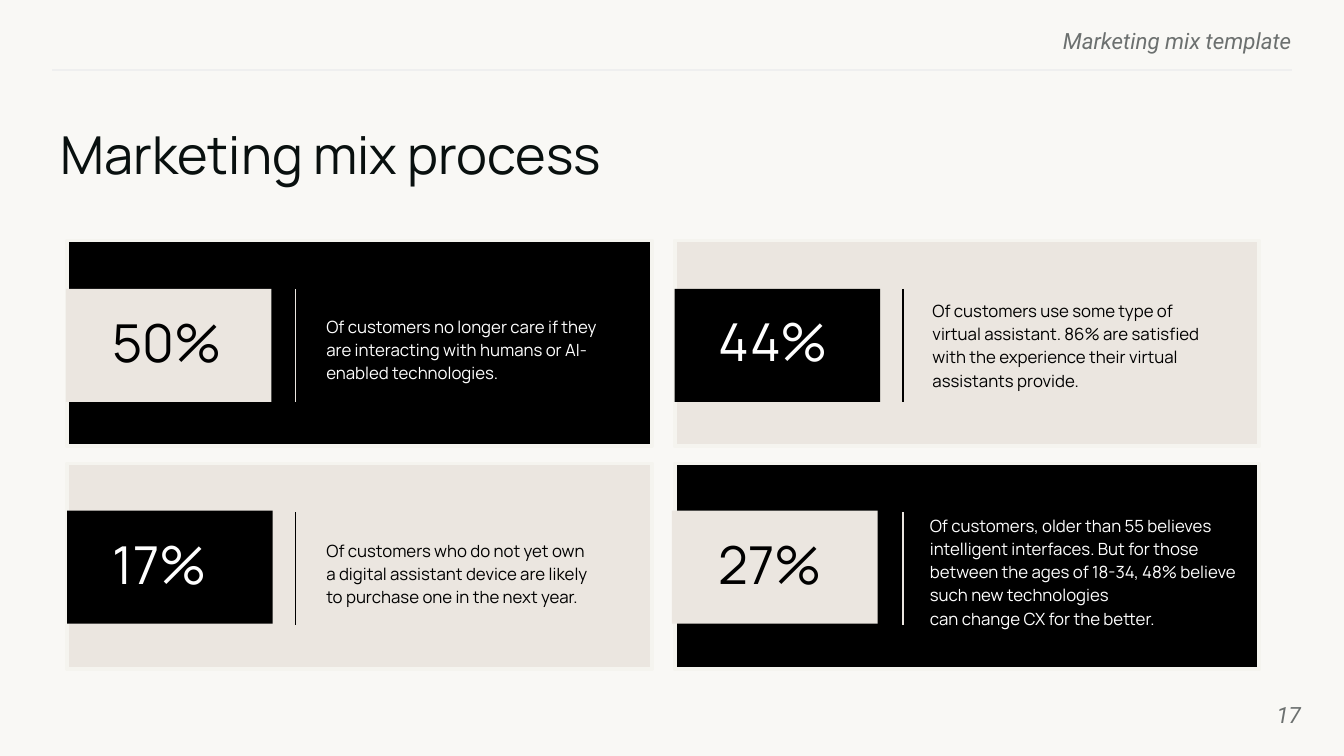
"""Build the marketing mix process slide with four statistic cards."""
import pptx
import pptx.util
from pptx.dml.color import RGBColor
from pptx.enum.shapes import MSO_CONNECTOR, MSO_SHAPE
from pptx.enum.text import MSO_ANCHOR, PP_ALIGN
from pptx.oxml.ns import qn
from lxml import etree

Inches, Pt = pptx.util.Inches, pptx.util.Pt

PAPER = RGBColor(0xF9, 0xF8, 0xF5)
BLACK = RGBColor(0, 0, 0)
WHITE = RGBColor(0xFF, 0xFF, 0xFF)
SAND = RGBColor(0xEB, 0xE6, 0xE0)
EDGE = RGBColor(0xF5, 0xF4, 0xEF)
RULE = RGBColor(0xEF, 0xEF, 0xEF)
GREY = RGBColor(0x6C, 0x70, 0x6F)
INK = RGBColor(0x09, 0x10, 0x0F)

HEAD = "Marketing mix template"
TITLE = "Marketing mix process"
PAGE = "17"
CARDS = [
    {"stat": "50%", "dark": True, "tag": (-0.01, 0.36),
     "num": (0.24, 0.47, 1.19, 0.57), "body": (1.83, 0.5, 2.33, 0.6),
     "text": ["Of customers no longer care if they are interacting with "
              "humans or AI-enabled technologies."]},
    {"stat": "44%", "dark": False, "tag": (0, 0.36),
     "num": (0.23, 0.46, 1.22, 0.57), "body": (1.82, 0.38, 2.26, 0.78),
     "text": ["Of customers use some type of virtual assistant. 86% are "
              "satisfied with the experience their virtual assistants "
              "provide."]},
    {"stat": "17%", "dark": False, "tag": (0, 0.35),
     "num": (0.24, 0.46, 1.01, 0.57), "body": (1.83, 0.42, 2.18, 0.78),
     "text": ["Of customers who do not yet own a digital assistant device "
              "are likely to purchase one in the next year."]},
    {"stat": "27%", "dark": True, "tag": (-0.02, 0.35),
     "num": (0.23, 0.46, 1.1, 0.57), "body": (1.8, 0.32, 2.51, 0.95),
     "text": ["Of customers, older than 55 believes intelligent interfaces. "
              "But for those between the ages of 18-34, 48% believe such "
              "new technologies ", "can change CX for the better."]},
]
LEFT, TOP = 0.5, 1.79
WIDE, HIGH = 4.35, 1.53
STEP_X, STEP_Y = 4.52, 1.66
TAG_W, TAG_H = 1.53, 0.84
BAR_X, BAR_Y = 1.7, 0.36


def write(shape, lines, font, size, color, pad=True, italic=False,
          align=PP_ALIGN.LEFT, anchor=MSO_ANCHOR.TOP):
    frame = shape.text_frame
    frame.word_wrap = True
    frame.vertical_anchor = anchor
    frame.margin_left = frame.margin_right = Inches(0.1 if pad else 0)
    frame.margin_top = frame.margin_bottom = Inches(0.05 if pad else 0)
    para = frame.paragraphs[0]
    para.alignment = align
    for i, line in enumerate(lines):
        if i:
            para.add_line_break()
        run = para.add_run()
        run.text = line
        run.font.name = font
        run.font.size = Pt(size)
        run.font.italic = italic
        run.font.color.rgb = color
    return para


def add_text(slide, box, lines, *style, **more):
    shape = slide.shapes.add_textbox(*map(Inches, box))
    return write(shape, lines, *style, **more)


def add_rect(slide, box, fill, edge=None):
    rect = slide.shapes.add_shape(MSO_SHAPE.RECTANGLE, *map(Inches, box))
    rect.shadow.inherit = False
    rect.fill.solid()
    rect.fill.fore_color.rgb = fill
    if edge is None:
        rect.line.fill.background()
    else:
        rect.line.color.rgb = edge
        rect.line.width = Pt(2)
    return rect


def add_line(slide, ends, color):
    line = slide.shapes.add_connector(
        MSO_CONNECTOR.STRAIGHT, *map(Inches, ends))
    line.line.color.rgb = color
    line.line.width = Pt(0.75)
    etree.SubElement(line._element.spPr, qn("a:effectLst"))


def add_card(slide, x, y, card):
    fill, tint, ink, num_ink = (
        (BLACK, SAND, WHITE, BLACK) if card["dark"]
        else (SAND, BLACK, BLACK, WHITE))

    def place(dx, dy, w, h):
        return x + dx, y + dy, w, h

    add_rect(slide, (x, y, WIDE, HIGH), fill, EDGE)
    bar = x + BAR_X, y + BAR_Y
    add_line(slide, (*bar, bar[0], bar[1] + TAG_H), tint)
    para = add_text(slide, place(*card["body"]), card["text"],
                    "Manrope", 9, ink, anchor=MSO_ANCHOR.MIDDLE)
    para.line_spacing = 1.15
    add_rect(slide, place(*card["tag"], TAG_W, TAG_H), tint)
    num = add_rect(slide, place(*card["num"]), tint)
    write(num, [card["stat"]], "Manrope", 28, num_ink)


def main():
    deck = pptx.Presentation()
    deck.slide_width, deck.slide_height = Inches(10), Inches(10 * 9 / 16)
    slide = deck.slides.add_slide(deck.slide_layouts[6])
    slide.background.fill.solid()
    slide.background.fill.fore_color.rgb = PAPER

    note = {"pad": False, "italic": True, "align": PP_ALIGN.RIGHT}
    add_text(slide, (5.76, 0.2, 3.85, 0.18), [HEAD],
             "Roboto", 12, GREY, **note)
    add_line(slide, (9.61, 0.52, 0.39, 0.52), RULE)
    title = add_text(slide, (0.45, 0.91, 9.23, 0.51), [TITLE],
                     "Manrope", 28, INK, pad=False)
    title.space_after = Pt(10)
    add_text(slide, (9.08, 5.1, 0.6, 0.43), [PAGE],
             "Roboto", 12, GREY, anchor=MSO_ANCHOR.MIDDLE, **note)

    for i, card in enumerate(CARDS):
        row, col = divmod(i, 2)
        add_card(slide, LEFT + col * STEP_X, TOP + row * STEP_Y, card)
    deck.save("out.pptx")


if __name__ == "__main__":
    main()
